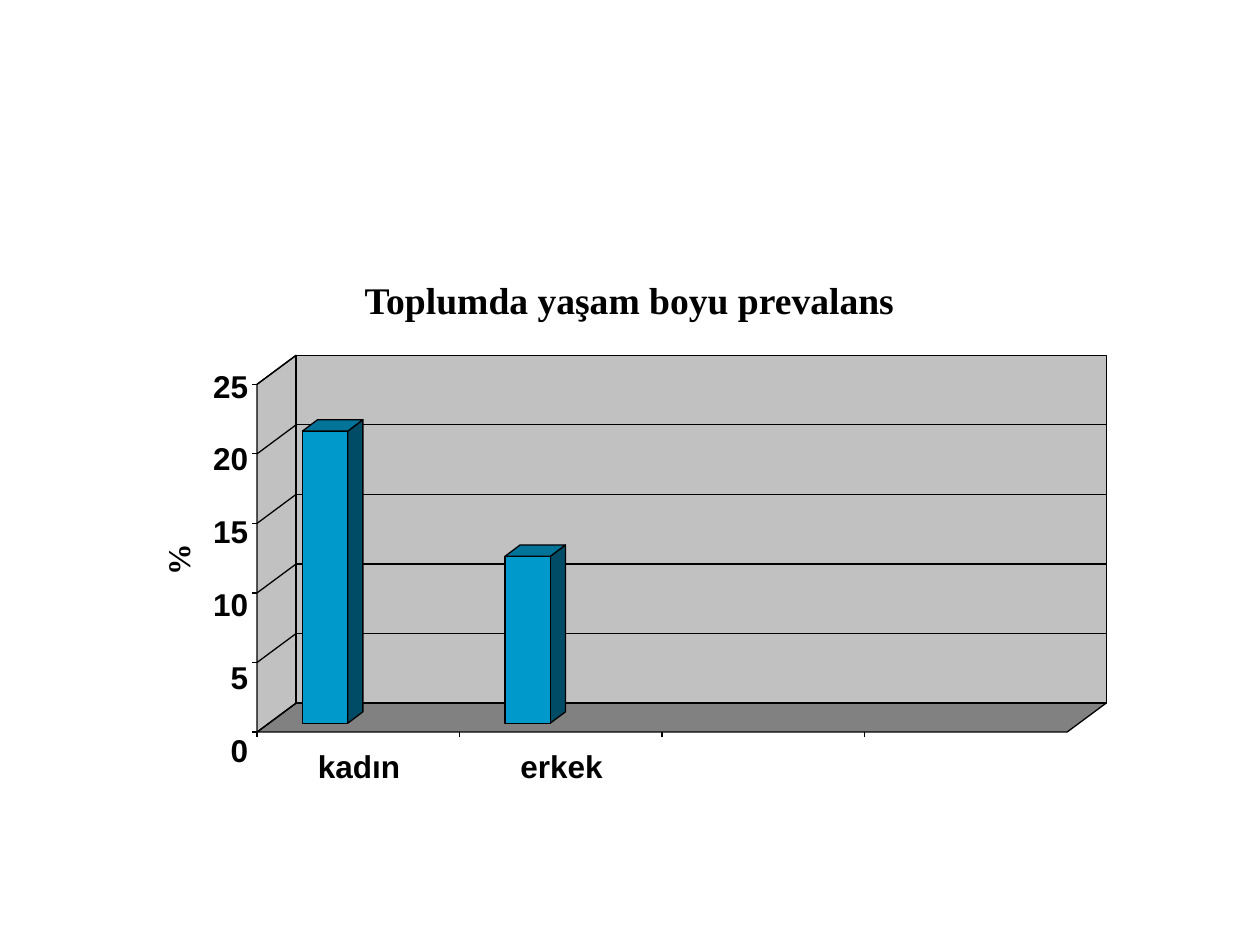
from lxml import etree
from pptx import Presentation
from pptx.dml.color import RGBColor
from pptx.enum.shapes import MSO_CONNECTOR
from pptx.enum.text import PP_ALIGN
from pptx.oxml.ns import qn
from pptx.util import Inches, Pt

COLORS = {
    "line": "000000", "text": "000000", "wall": "C1C1C1", "floor": "818181",
    "front": "0099CC", "top": "007399", "side": "004C66",
}

prs = Presentation()
prs.slide_width, prs.slide_height = Inches(10), Inches(7.5)
shapes = prs.slides.add_slide(prs.slide_layouts[6]).shapes


def draw(points, fill=None):
    """Draw a filled, outlined polygon, or a plain line when there is no fill."""
    pts = [(Inches(x), Inches(y)) for x, y in points]
    if fill:
        builder = shapes.build_freeform(*pts[0])
        builder.add_line_segments(pts[1:], close=True)
        sp = builder.convert_to_shape()
        sp.shadow.inherit = False
        sp.fill.solid()
        sp.fill.fore_color.rgb = RGBColor.from_string(COLORS[fill])
    else:
        sp = shapes.add_connector(MSO_CONNECTOR.STRAIGHT, *pts[0], *pts[1])
        etree.SubElement(sp._element.spPr, qn("a:effectLst"))
    sp.line.color.rgb = RGBColor.from_string(COLORS["line"])
    sp.line.width = Pt(0.75)


def add_text(lines, box, font="Arial", size=18, align=PP_ALIGN.CENTER, gap=0):
    sp = shapes.add_textbox(*map(Inches, box))
    tf = sp.text_frame
    tf.margin_left = tf.margin_right = tf.margin_top = tf.margin_bottom = 0
    tf.word_wrap = False
    for i, line in enumerate(lines):
        p = tf.add_paragraph() if i else tf.paragraphs[0]
        p.text = line
        p.alignment = align
        p.space_after = Pt(gap)
        p.font.name, p.font.size, p.font.bold = font, Pt(size), True
        p.font.color.rgb = RGBColor.from_string(COLORS["text"])
    return sp


# Plot box: front plane, shifted by the depth to give the back wall
left, right, top, bottom = 2.04, 8.47, 3.05, 5.81
depth_x, depth_y = 0.31, -0.23
back_left, back_right = left + depth_x, right + depth_x
back_top, back_bottom = top + depth_y, bottom + depth_y
draw([(left, bottom), (right, bottom), (back_right, back_bottom),
      (back_left, back_bottom)], "floor")
draw([(left, bottom), (left, top), (back_left, back_top),
      (back_left, back_bottom)], "wall")
draw([(back_left, back_top), (back_right, back_top),
      (back_right, back_bottom), (back_left, back_bottom)], "wall")

# Gridlines and value axis ticks
axis_max, axis_step, tick = 25, 5, 0.04
unit = (bottom - top) / axis_max
axis_values = range(axis_max, -1, -axis_step)
for value in axis_values:
    y = bottom - value * unit
    draw([(left, y), (back_left, y + depth_y)])
    draw([(back_left, y + depth_y), (back_right, y + depth_y)])
    draw([(left - tick, y), (left, y)])

# Category axis ticks
slots = 4
slot_width = (right - left) / slots
for i in range(slots):
    x = left + i * slot_width
    draw([(x, bottom), (x, bottom + tick)])

# Bars with their category labels
bar_width, bar_dx, bar_dy, base = 0.36, 0.12, -0.09, 5.74
for i, (name, value) in enumerate([("kadın", 21), ("erkek", 12)]):
    slot = left + i * slot_width
    x1 = slot + 0.36
    x2, y = x1 + bar_width, base - value * unit
    draw([(x2, base), (x2, y), (x2 + bar_dx, y + bar_dy),
          (x2 + bar_dx, base + bar_dy)], "side")
    draw([(x1, y), (x2, y), (x2, base), (x1, base)], "front")
    draw([(x1, y), (x1 + bar_dx, y + bar_dy), (x2 + bar_dx, y + bar_dy),
          (x2, y)], "top")
    add_text([name], (slot + 0.48, 5.93, 0.66, 0.3))

# Value labels, axis title and chart title
add_text([str(v) for v in axis_values], (1.67, 2.91, 0.3, 3.09),
         align=PP_ALIGN.RIGHT, gap=20)
axis_title = add_text(["%"], (1.26, 4.3, 0.3, 0.28), "Times New Roman")
axis_title.text_frame._txBody.bodyPr.set("vert", "vert270")
add_text(["Toplumda yaşam boyu prevalans"], (2.89, 2.2, 4.21, 0.35),
         "Times New Roman", 21.5)

prs.save("out.pptx")
